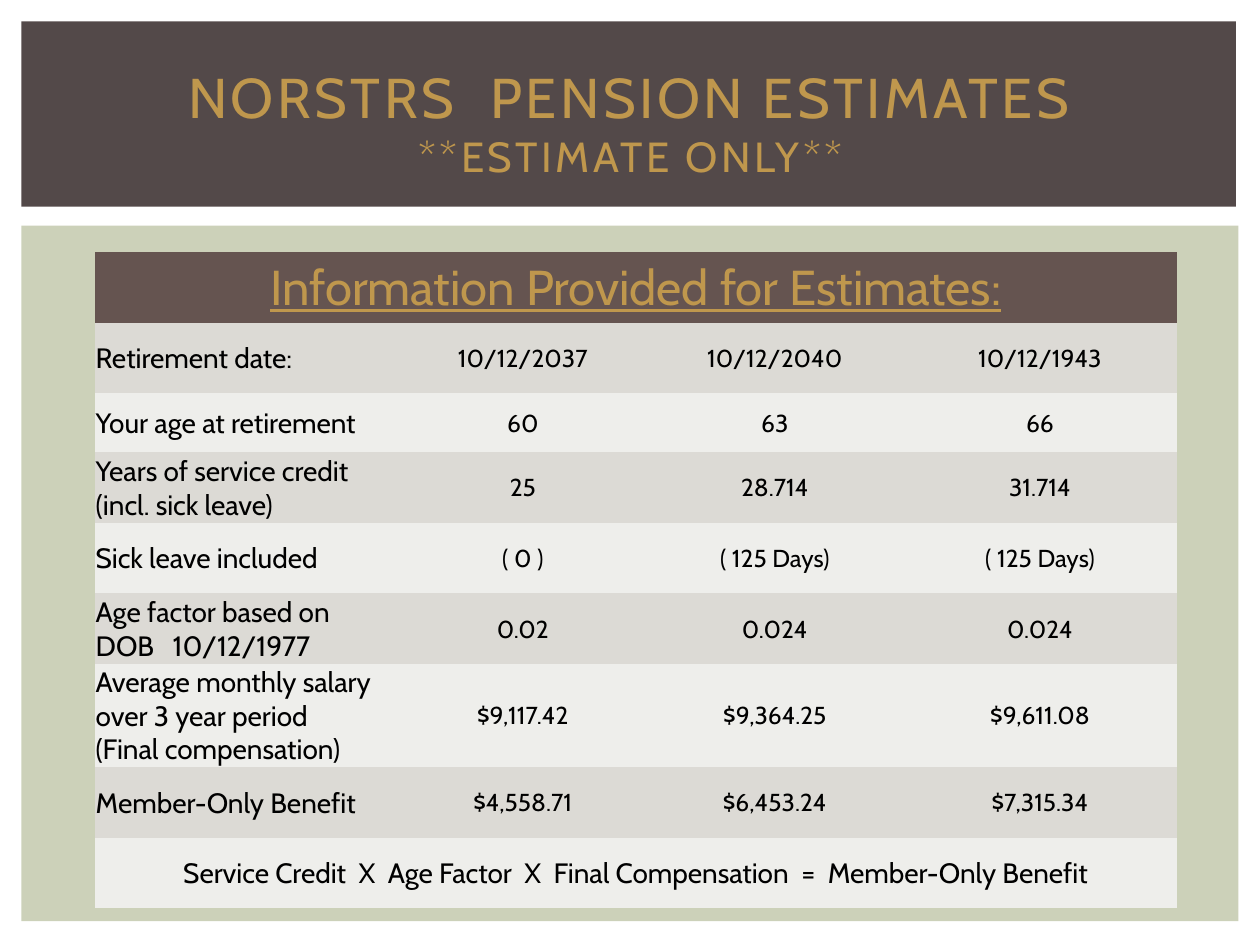
"""Build the pension estimates slide."""
from dataclasses import dataclass

from pptx import Presentation
from pptx.dml.color import RGBColor
from pptx.enum.shapes import MSO_SHAPE
from pptx.enum.text import MSO_ANCHOR, PP_ALIGN
from pptx.util import Inches, Pt

RECT = MSO_SHAPE.RECTANGLE
MID = MSO_ANCHOR.MIDDLE
LEFT, MIDDLE = PP_ALIGN.LEFT, PP_ALIGN.CENTER
PLAIN = "{2D5ABB26-0587-4C30-8999-92F81FD0307C}"


@dataclass(frozen=True)
class Theme:
    """Colours, font and type sizes of the slide."""
    font: str = "Cabin"
    gold: str = "BF974D"
    ink: str = "000000"
    band: str = "534949"
    field: str = "CCD1B9"
    head: str = "655450"
    rows: tuple = ("DCDAD5", "EEEEEB")
    title: int = 32
    sub: int = 24
    top: int = 28
    label: int = 16
    value: int = 14


THEME = Theme()
HEAD = "Information Provided for Estimates:"
ROWS = [
    ("Retirement date:", "10/12/2037", "10/12/2040", "10/12/1943"),
    ("Your age at retirement", "60", "63", "66"),
    ("Years of service credit\n(incl. sick leave)", "25", "28.714", "31.714"),
    ("Sick leave included", "( 0 )", "( 125 Days)", "( 125 Days)"),
    ("Age factor based on\nDOB|10/12/1977", "0.02", "0.024", "0.024"),
    ("Average monthly salary over 3 year period\n(Final compensation)",
     "$9,117.42", "$9,364.25", "$9,611.08"),
    ("Member-Only Benefit", "$4,558.71", "$6,453.24", "$7,315.34"),
]
RULE = "Service Credit|X|Age Factor|X|Final Compensation|=|Member-Only Benefit"
WIDTHS = (24.2, 19.6, 20.4, 21.7)
HEIGHTS = (5.6, 5.6, 4.7, 5.6, 5.6, 5.6, 8.2, 5.6, 5.6)


def unit(count):
    """Turn grid steps, 100 across and 75 down, into a length."""
    return Inches(count / 10)


def put(frame, text, size, sub=None, color=THEME.ink, align=MIDDLE,
        line=False, space=0, gap=0):
    """Write text; a bar in it marks a gap that is wider than a space."""
    para = frame.paragraphs[0]
    para.alignment = align
    frame.word_wrap = True
    for row, words in enumerate(text.split("\n")):
        if row:
            para.add_line_break()
        for part, piece in enumerate(words.split("|")):
            pairs = [(" ", space + gap)] if part else []
            for body, track in pairs + [(piece, space)]:
                run = para.add_run()
                run.text = body
                font = run.font
                font.name = THEME.font
                font.size = Pt(sub if row and sub else size)
                font.underline = line
                font.color.rgb = RGBColor.from_string(color)
                if track:
                    run._r.get_or_add_rPr().set("spc", str(int(track * 100)))


class Page:
    """Hold the theme and the current slide."""

    def __init__(self, slide, theme):
        """Keep the slide and its theme."""
        self.slide, self.theme = slide, theme

    def panel(self, box, color):
        """Draw a plain filled rectangle."""
        shape = self.slide.shapes.add_shape(RECT, *map(unit, box))
        shape.shadow.inherit = False
        shape.fill.solid()
        shape.fill.fore_color.rgb = RGBColor.from_string(color)
        shape.line.fill.background()

    def label(self, box, text, size, **style):
        """Add a text box centred on its height."""
        frame = self.slide.shapes.add_textbox(*map(unit, box)).text_frame
        frame.vertical_anchor = MID
        put(frame, text, size, **style)

    def cell(self, cell, text, size, fill, **style):
        """Fill one table cell."""
        cell.fill.solid()
        cell.fill.fore_color.rgb = RGBColor.from_string(fill)
        cell.vertical_anchor = MID
        cell.margin_left = cell.margin_right = cell.margin_top = unit(0.1)
        cell.margin_bottom = 0
        put(cell.text_frame, text, size, **style)

    def table(self, left, top):
        """Add the table of estimates."""
        look = self.theme
        box = (left, top, sum(WIDTHS), sum(HEIGHTS))
        grid = self.slide.shapes.add_table(
            len(HEIGHTS), len(WIDTHS), *map(unit, box)).table
        grid._tbl.tblPr[0].text = PLAIN
        grid.first_row = grid.horz_banding = False
        for col, width in zip(grid.columns, WIDTHS):
            col.width = unit(width)
        for row, height in zip(grid.rows, HEIGHTS):
            row.height = unit(height)
        last = len(HEIGHTS) - 1
        for row in (0, last):
            grid.cell(row, 0).merge(grid.cell(row, len(WIDTHS) - 1))
        self.cell(grid.cell(0, 0), HEAD, look.top, look.head,
                  color=look.gold, line=True)
        for row, texts in enumerate(ROWS):
            for col, text in enumerate(texts):
                self.cell(grid.cell(row + 1, col), text,
                          look.value if col else look.label,
                          look.rows[row % 2],
                          align=MIDDLE if col else LEFT, gap=7)
        self.cell(grid.cell(last, 0), RULE, look.label, look.rows[1], gap=3.5)


def main():
    """Build and save the slide."""
    deck = Presentation()
    deck.slide_width, deck.slide_height = unit(100), unit(75)
    page = Page(deck.slides.add_slide(deck.slide_layouts[6]), THEME)
    page.panel((1.7, 17.9, 96.6, 55.2), THEME.field)
    page.panel((1.7, 1.7, 96.4, 14.7), THEME.band)
    page.label((4.2, 3.9, 91.7, 11.5),
               "NORSTRS|PENSION ESTIMATES\n**ESTIMATE ONLY**",
               THEME.title, sub=THEME.sub, color=THEME.gold, space=2, gap=9)
    page.table(7.5, 20)
    deck.save("out.pptx")


if __name__ == "__main__":
    main()
